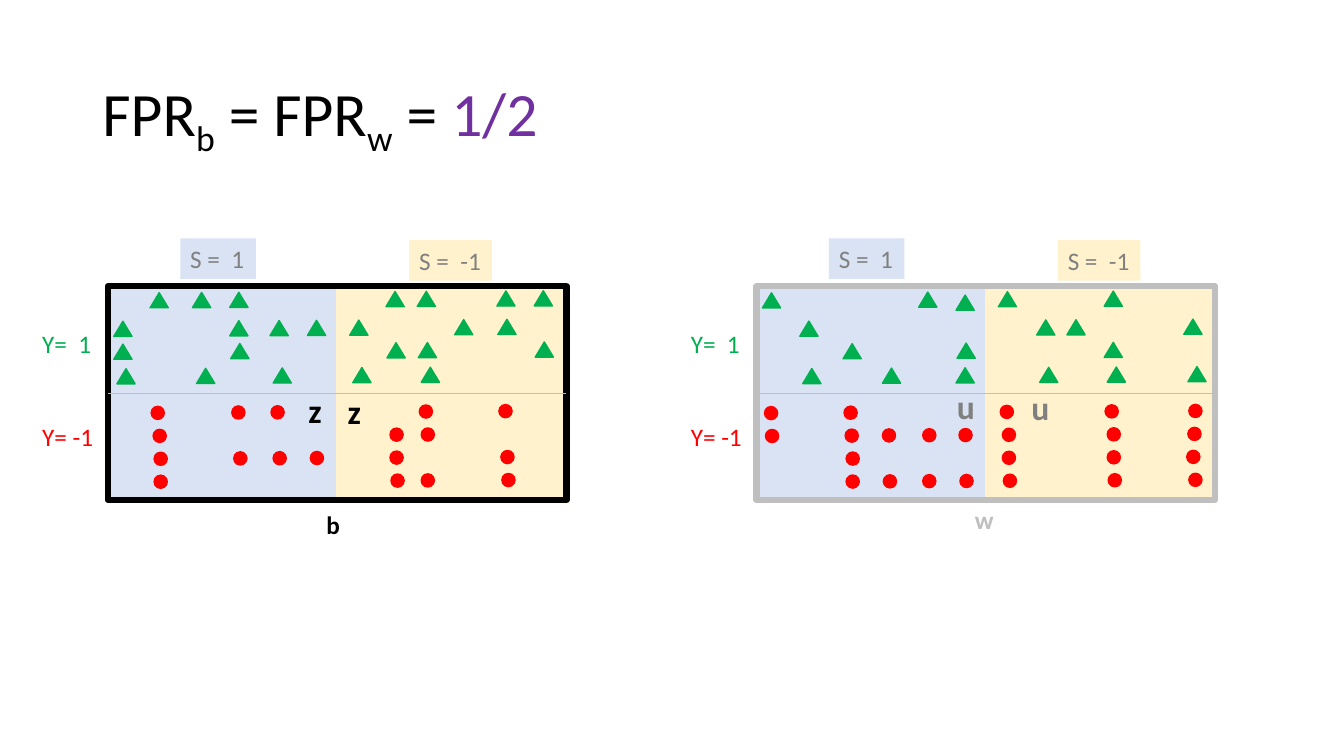
import pptx
import pptx.dml.color
import pptx.enum.shapes
import pptx.enum.text
import pptx.oxml.ns
import pptx.util
from dataclasses import dataclass
from lxml import etree

Pt = pptx.util.Pt
SHAPE = pptx.enum.shapes.MSO_SHAPE


@dataclass(frozen=True)
class Theme:
    font: str = "Calibri"
    black: str = "000000"
    purple: str = "7030A0"
    green: str = "00B050"
    red: str = "FF0000"
    blue: str = "DAE3F3"
    cream: str = "FFF2CC"
    grey: str = "808080"
    silver: str = "BFBFBF"
    title: int = 44
    letter: int = 24
    label: int = 18


class Deck:
    """Draws styled elements on the current slide, with lengths in points."""

    def __init__(self, theme, width, height):
        self.t = theme
        self.prs = pptx.Presentation()
        self.prs.slide_width, self.prs.slide_height = Pt(width), Pt(height)

    def add_slide(self):
        self.s = self.prs.slides.add_slide(self.prs.slide_layouts[5])
        self.shapes = self.s.shapes

    def start_group(self):
        self.shapes = self.s.shapes.add_group_shape().shapes

    def end_group(self):
        self.shapes = self.s.shapes

    def color(self, value):
        return pptx.dml.color.RGBColor.from_string(value)

    def run(self, p, text, size, color, bold=False, baseline=0):
        r = p.add_run()
        r.text = text
        r.font.name, r.font.size, r.font.bold = self.t.font, Pt(size), bold
        r.font.color.rgb = self.color(color)
        if baseline:
            r._r.get_or_add_rPr().set("baseline", str(baseline * 1000))

    def title(self, x, y, w, h, runs):
        sp = self.s.shapes.title
        sp.left, sp.top, sp.width, sp.height = Pt(x), Pt(y), Pt(w), Pt(h)
        tf = sp.text_frame
        tf.word_wrap = True
        tf.auto_size = pptx.enum.text.MSO_AUTO_SIZE.NONE
        tf.vertical_anchor = pptx.enum.text.MSO_ANCHOR.MIDDLE
        p = tf.paragraphs[0]
        p.alignment = pptx.enum.text.PP_ALIGN.LEFT
        p.line_spacing = 0.9
        for text, color, baseline in runs:
            self.run(p, text, self.t.title, color, baseline=baseline)

    def shape(self, kind, x, y, w, h, fill, line, weight=1):
        sp = self.shapes.add_shape(kind, Pt(x), Pt(y), Pt(w), Pt(h))
        sp.shadow.inherit = False
        if fill:
            sp.fill.solid()
            sp.fill.fore_color.rgb = self.color(fill)
        else:
            sp.fill.background()
        sp.line.color.rgb = self.color(line)
        sp.line.width = Pt(weight)
        return sp

    def divider(self, frame, color, weight):
        cx = self.shapes.add_connector(pptx.enum.shapes.MSO_CONNECTOR.STRAIGHT, 0, 0, 0, 0)
        cx.begin_connect(frame, 1)
        cx.end_connect(frame, 3)
        cx.line.color.rgb = self.color(color)
        cx.line.width = Pt(weight)
        etree.SubElement(cx._element.spPr, pptx.oxml.ns.qn("a:effectLst"))

    def text(self, x, y, w, h, text, size, color, bold=False, fill=None):
        sp = self.shapes.add_textbox(Pt(x), Pt(y), Pt(w), Pt(h))
        if fill:
            sp.fill.solid()
            sp.fill.fore_color.rgb = self.color(fill)
        tf = sp.text_frame
        tf.word_wrap = False
        tf.auto_size = pptx.enum.text.MSO_AUTO_SIZE.SHAPE_TO_FIT_TEXT
        self.run(tf.paragraphs[0], text, size, color, bold)


@dataclass(frozen=True)
class Panel:
    left: float
    frame: str
    triangles: tuple
    circles: tuple
    letter: str
    letter_color: str
    letter_spots: tuple
    caption: str
    caption_top: float


THEME = Theme()
TOP, WIDTH, HEIGHT = 204.5, 327.6, 152.6
HALF = 162.7
TILT = 0.005

PANELS = (
    Panel(
        77, THEME.black,
        ((209.2, (30.2, 60.5, 87.1, 198.7, 221, 277.9, 304.6)),
         (229.5, (4.3, 87.1, 115.9, 142.6, 172.8, 247.7, 278.6)),
         (245.8, (4.3, 87.8, 199.4, 221.8, 305.3)),
         (263.4, (6.5, 63.4, 118.1, 175, 223.9))),
        ((290.4, (31, 88.6, 116.6, 222.5, 279.4)),
         (306.8, (32.4, 201.6, 223.9)),
         (323.2, (33.1, 90, 118.1, 144.7, 201.6, 280.8)),
         (339.6, (33.1, 202.3, 223.9, 281.5))),
        "z", THEME.black, ((136.1, 275), (164.2, 275.8)), "b", 360),
    Panel(
        540.3, THEME.silver,
        ((209.2, (4.3, 115.9, 172.8, 248.4)),
         (211.5, (142.6,)),
         (229.5, (31, 200.2, 221.8, 305.3)),
         (245.8, (61.9, 143.3, 248.4)),
         (263.4, (33.1, 90, 142.6, 202.3, 250.6, 308.2))),
        ((290.4, (5.8, 62.6, 174.2, 249.1, 308.9)),
         (306.8, (6.5, 63.4, 90, 118.8, 144.7, 175.7, 250.6, 308.2)),
         (323.2, (64.1, 175.7, 250.6, 307.4)),
         (339.6, (64.1, 90.7, 118.8, 145.4, 176.4, 251.3, 308.9))),
        "u", THEME.grey, ((136.1, 272.2), (189.4, 272.9)), "w", 357),
)


def draw_panel(deck, panel):
    t, left = deck.t, panel.left
    deck.start_group()
    for i, color in enumerate((t.blue, t.cream)):
        deck.shape(SHAPE.RECTANGLE, left + 1 + i * HALF, TOP, HALF, HEIGHT, color, color)
    frame = deck.shape(SHAPE.RECTANGLE, left, TOP, WIDTH, HEIGHT, None, panel.frame, 4.5)
    deck.divider(frame, t.silver, 0.5)
    for kind, rows, w, h, color in (
        (SHAPE.ISOSCELES_TRIANGLE, panel.triangles, 13, 10.8, t.green),
        (SHAPE.OVAL, panel.circles, 9.4, 9.4, t.red),
    ):
        for y, xs in rows:
            for x in xs:
                deck.shape(kind, left + x, y - TILT * x, w, h, color, color)
    for x, y, w, text, color, fill in (
        (-54, 231, 49.7, "Y=  1", t.green, None),
        (-54, 297.7, 51.1, "Y= -1", t.red, None),
        (51.8, 170.3, 54, "S =  1", t.grey, t.blue),
        (215.3, 171.5, 59, "S =  -1", t.grey, t.cream),
    ):
        deck.text(left + x, y, w, 29, text, t.label, color, fill=fill)
    deck.end_group()
    deck.text(left + 149, panel.caption_top, 26, 29, panel.caption, t.label, panel.frame, True)
    for x, y in panel.letter_spots:
        deck.text(left + x, y, 26, 36, panel.letter, t.letter, panel.letter_color, True)


def main():
    deck = Deck(THEME, 960, 540)
    deck.add_slide()
    deck.title(66, 28.75, 828, 104.4, (
        ("FPR", THEME.black, 0),
        ("b", THEME.black, -25),
        (" = FPR", THEME.black, 0),
        ("w", THEME.black, -25),
        (" = ", THEME.black, 0),
        ("1/2", THEME.purple, 0),
    ))
    for panel in PANELS:
        draw_panel(deck, panel)
    deck.prs.save("out.pptx")


if __name__ == "__main__":
    main()
